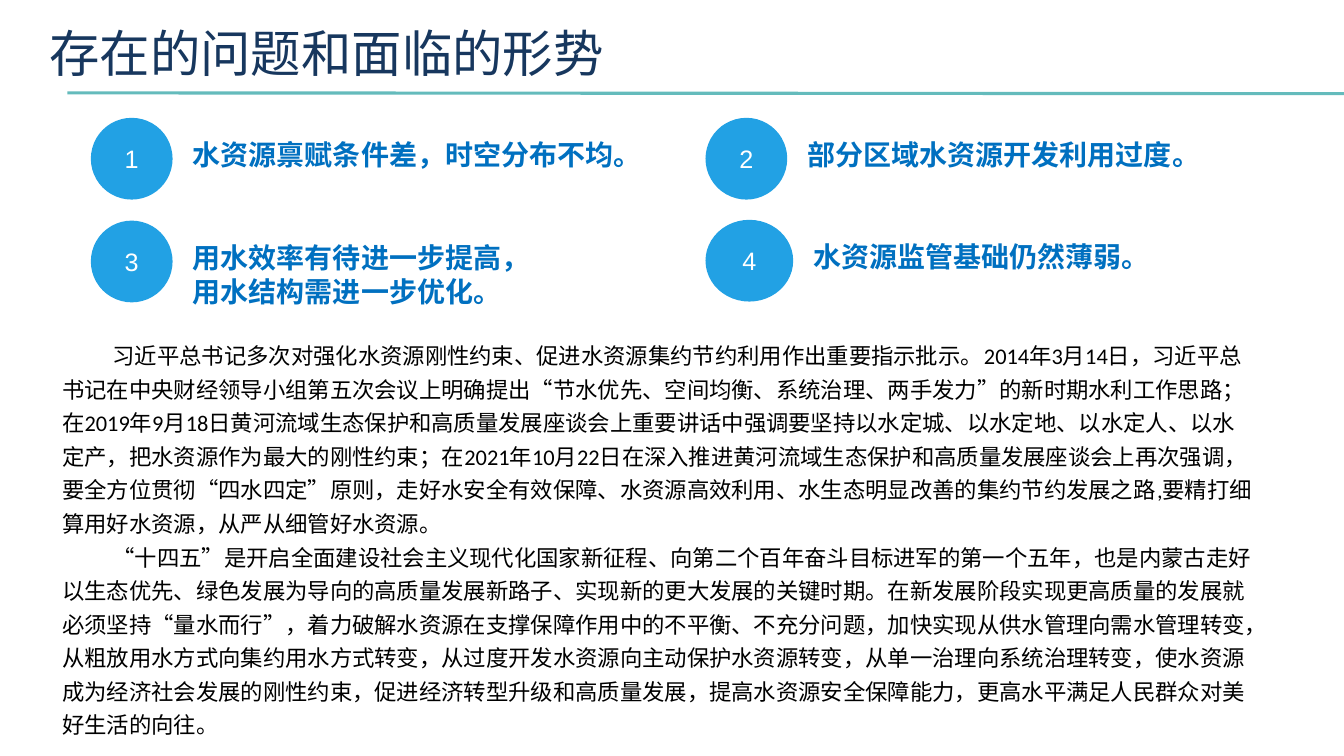
from lxml import etree
from pptx import Presentation
from pptx.dml.color import RGBColor
from pptx.enum.shapes import MSO_CONNECTOR, MSO_SHAPE
from pptx.enum.text import MSO_ANCHOR, MSO_AUTO_SIZE, PP_ALIGN
from pptx.oxml.ns import qn
from pptx.util import Cm, Pt

STRAIGHT = MSO_CONNECTOR.STRAIGHT
OVAL = MSO_SHAPE.OVAL
TOP, MIDDLE = MSO_ANCHOR.TOP, MSO_ANCHOR.MIDDLE
GROW = MSO_AUTO_SIZE.SHAPE_TO_FIT_TEXT
LEFT, CENTER = PP_ALIGN.LEFT, PP_ALIGN.CENTER

COLORS = {"title": "17375E", "rule": "64BBBC", "disc": "22A1E4",
          "item": "0070C0", "body": "000000", "white": "FFFFFF"}
SANS = "Noto Sans CJK SC"
TITLE = "存在的问题和面临的形势"
# number, left, top, disc width, text width, text height, text
ITEMS = [
    (1, 2.29, 2.97, 2.06, 11.28, 1.12, "水资源禀赋条件差，时空分布不均。"),
    (3, 2.29, 5.56, 2.06, 9.6, 1.96, "用水效率有待进一步提高，用水结构需进一步优化。"),
    (2, 17.78, 2.97, 2.06, 10.41, 1.12, "部分区域水资源开发利用过度。"),
    (4, 17.78, 5.54, 2.21, 10.92, 1.12, "水资源监管基础仍然薄弱。"),
]
BODY = [
    "习近平总书记多次对强化水资源刚性约束、促进水资源集约节约利用作出重要指示批示。"
    "2014年3月14日，习近平总书记在中央财经领导小组第五次会议上明确提出"
    "“节水优先、空间均衡、系统治理、两手发力”的新时期水利工作思路；"
    "在2019年9月18日黄河流域生态保护和高质量发展座谈会上重要讲话中强调要坚持"
    "以水定城、以水定地、以水定人、以水定产，把水资源作为最大的刚性约束；"
    "在2021年10月22日在深入推进黄河流域生态保护和高质量发展座谈会上再次强调，"
    "要全方位贯彻“四水四定”原则，走好水安全有效保障、水资源高效利用、"
    "水生态明显改善的集约节约发展之路,要精打细算用好水资源，从严从细管好水资源。",
    "“十四五”是开启全面建设社会主义现代化国家新征程、"
    "向第二个百年奋斗目标进军的第一个五年，也是内蒙古走好以生态优先、"
    "绿色发展为导向的高质量发展新路子、实现新的更大发展的关键时期。"
    "在新发展阶段实现更高质量的发展就必须坚持“量水而行”，"
    "着力破解水资源在支撑保障作用中的不平衡、不充分问题，"
    "加快实现从供水管理向需水管理转变，从粗放用水方式向集约用水方式转变，"
    "从过度开发水资源向主动保护水资源转变，从单一治理向系统治理转变，"
    "使水资源成为经济社会发展的刚性约束，促进经济转型升级和高质量发展，"
    "提高水资源安全保障能力，更高水平满足人民群众对美好生活的向往。",
]


def color(name):
    return RGBColor.from_string(COLORS[name])


def style(para, size, name, face, bold=False):
    for run in para.runs:
        font = run.font
        font.size, font.bold, font.name = Pt(size), bold, face
        font.color.rgb = color(name)


def add_title(slide):
    title = slide.shapes.title
    title.left, title.top = Cm(0.99), Cm(0.43)
    title.width, title.height = Cm(14.63), Cm(1.8)
    frame = title.text_frame
    frame.text = TITLE
    frame.word_wrap = False
    frame.auto_size = GROW
    frame.vertical_anchor = TOP
    para = frame.paragraphs[0]
    para.alignment = LEFT
    style(para, 36, "title", SANS)


def add_rule(slide, width):
    rule = slide.shapes.add_connector(STRAIGHT, Cm(1.7), Cm(2.34), width, Cm(2.36))
    rule.line.color.rgb = color("rule")
    rule.line.width = Pt(2.25)
    etree.SubElement(rule._element.spPr, qn("a:effectLst"))


def add_disc(shapes, num, x, y, wide):
    disc = shapes.add_shape(OVAL, Cm(x), Cm(y), Cm(wide), Cm(2.06))
    disc.shadow.inherit = False
    disc.fill.solid()
    disc.fill.fore_color.rgb = color("disc")
    disc.line.fill.background()
    frame = disc.text_frame
    frame.text = str(num)
    frame.vertical_anchor = MIDDLE
    para = frame.paragraphs[0]
    para.alignment = CENTER
    style(para, 18, "white", "Arial")
    para.runs[0].font._element.set("spc", "300")


def add_text(shapes, x, y, wide, high, text):
    box = shapes.add_textbox(Cm(x), Cm(y), Cm(wide), Cm(high))
    frame = box.text_frame
    frame.word_wrap = True
    frame.auto_size = GROW
    frame.text = text
    return frame.paragraphs


def add_item(slide, num, x, y, disc, wide, high, text):
    shapes = slide.shapes.add_group_shape().shapes
    add_disc(shapes, num, x, y, disc)
    paras = add_text(shapes, x + disc + 0.26, y + 0.38, wide, high, text)
    style(paras[0], 20, "item", SANS, True)


def add_body(slide):
    for para in add_text(slide.shapes, 1.32, 8.33, 30.63, 10.44, "\n".join(BODY)):
        para.line_spacing = 1.25
        props = para._p.get_or_add_pPr()
        props.set("marL", "0")
        props.set("indent", str(Cm(1.27)))
        style(para, 16, "body", "Calibri")


def main():
    deck = Presentation()
    deck.slide_width, deck.slide_height = Cm(33.87), Cm(19.05)
    slide = deck.slides.add_slide(deck.slide_layouts[5])
    add_title(slide)
    add_rule(slide, deck.slide_width)
    for item in ITEMS:
        add_item(slide, *item)
    add_body(slide)
    deck.save("out.pptx")


if __name__ == "__main__":
    main()
